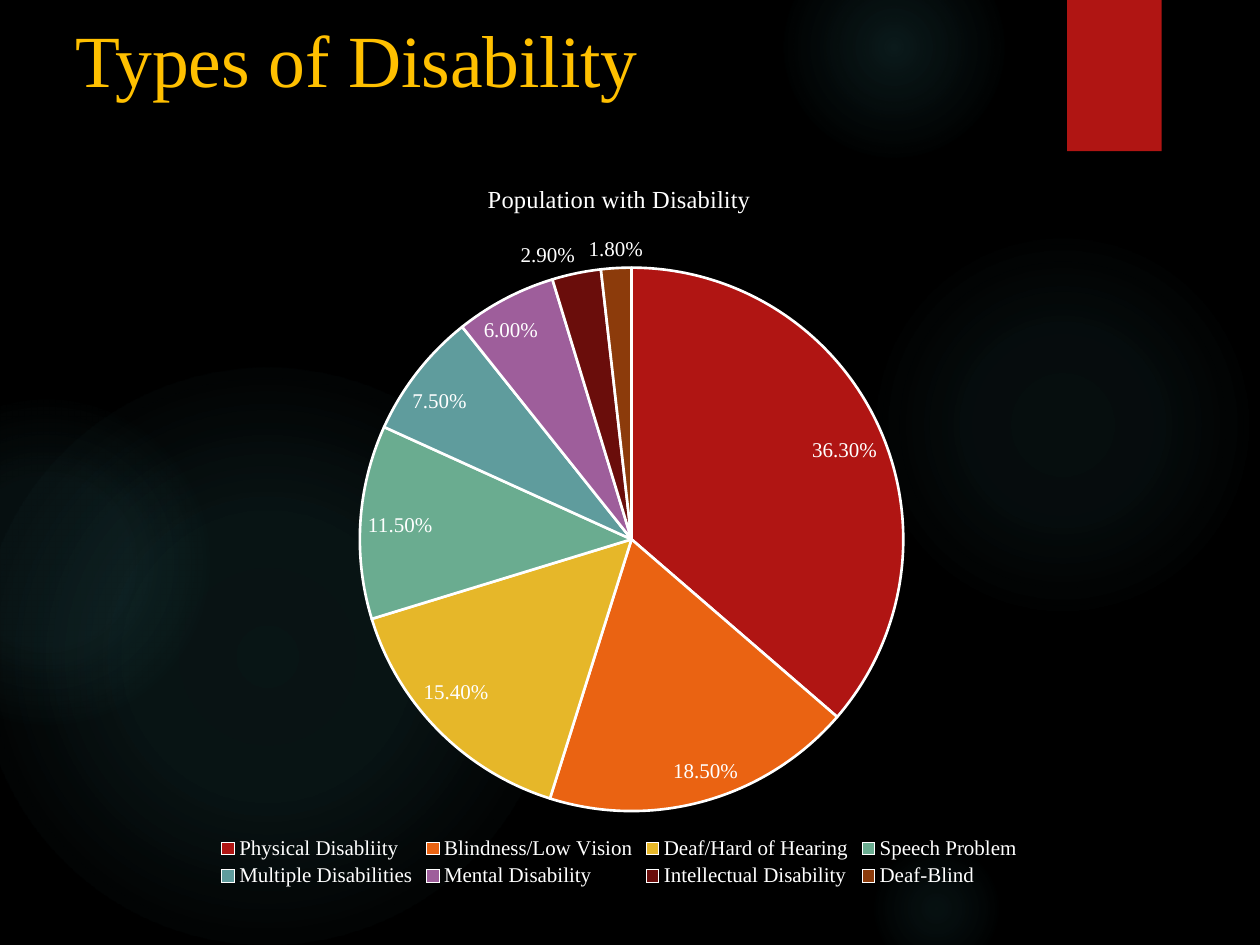
from lxml import etree
from pptx import Presentation
from pptx.chart.data import CategoryChartData
from pptx.dml.color import RGBColor
from pptx.enum.chart import XL_CHART_TYPE, XL_LABEL_POSITION, XL_LEGEND_POSITION
from pptx.enum.shapes import MSO_SHAPE
from pptx.enum.text import MSO_ANCHOR, PP_ALIGN
from pptx.oxml import parse_xml
from pptx.oxml.ns import nsdecls, qn
from pptx.util import Inches, Pt

PIE = XL_CHART_TYPE.PIE
BEST = XL_LABEL_POSITION.BEST_FIT
BOTTOM = XL_LEGEND_POSITION.BOTTOM
OVAL, RECT = MSO_SHAPE.OVAL, MSO_SHAPE.RECTANGLE
TOP, LEFT = MSO_ANCHOR.TOP, PP_ALIGN.LEFT

COLORS = {"back": "000000", "glow": "50B9C1", "tab": "B01513",
          "title": "FFC000", "text": "FFFFFF"}
GLOWS = [
    (6.89, 1.83, 3.08, [(0, 7), (36, 6), (69, 0)]),
    (6.22, -0.5, 1.75, [(0, 14), (36, 7), (73, 0)]),
    (6.89, 6.67, 1.08, [(0, 9), (36, 5), (66, 0)]),
    (-0.17, 2.92, 4.58, [(0, 11), (36, 10), (75, 0)]),
    (-0.92, 3.17, 2.58, [(0, 8), (36, 8), (72, 0)]),
]
SLICES = [
    ("Physical Disabliity", 0.363, "B01513"),
    ("Blindness/Low Vision", 0.185, "EA6312"),
    ("Deaf/Hard of Hearing", 0.154, "E6B729"),
    ("Speech Problem", 0.115, "6AAC90"),
    ("Multiple Disabilities", 0.075, "5F9C9D"),
    ("Mental Disability", 0.06, "9E5E9B"),
    ("Intellectual Disability", 0.029, "6A0D0B"),
    ("Deaf-Blind", 0.018, "8C3B0B"),
]


def rgb(code):
    return RGBColor.from_string(code)


class Deck:
    font = "Times New Roman"

    def __init__(self):
        self.prs = Presentation()
        self.prs.slide_width, self.prs.slide_height = Inches(10), Inches(7.5)
        self.slide = self.prs.slides.add_slide(self.prs.slide_layouts[5])
        self.paint(self.slide.background.fill, COLORS["back"])

    def paint(self, fill, code):
        fill.solid()
        fill.fore_color.rgb = rgb(code)

    def style(self, font, size, code):
        font.name, font.size, font.bold = self.font, Pt(size), False
        font.color.rgb = rgb(code)

    def shape(self, kind, x, y, w, h, code):
        item = self.slide.shapes.add_shape(
            kind, Inches(x), Inches(y), Inches(w), Inches(h))
        item.shadow.inherit = False
        item.line.fill.background()
        self.paint(item.fill, code)
        return item

    def glow(self, x, y, size, stops):
        item = self.shape(OVAL, x, y, size, size, COLORS["glow"])
        marks = "".join(
            f'<a:gs pos="{pos * 1000}"><a:srgbClr val="{COLORS["glow"]}">'
            f'<a:alpha val="{alpha * 1000}"/></a:srgbClr></a:gs>'
            for pos, alpha in stops)
        grad = parse_xml(
            f'<a:gradFill {nsdecls("a")} rotWithShape="1"><a:gsLst>{marks}</a:gsLst>'
            '<a:path path="circle"><a:fillToRect l="50000" t="50000" '
            'r="50000" b="50000"/></a:path></a:gradFill>')
        props = item.element.spPr
        props.replace(props.find(qn("a:solidFill")), grad)

    def title(self, text, x, y, w, h):
        item = self.slide.shapes.title
        item.left, item.top = Inches(x), Inches(y)
        item.width, item.height = Inches(w), Inches(h)
        frame = item.text_frame
        frame.word_wrap = True
        frame.vertical_anchor = TOP
        frame.margin_top = Inches(0.11)
        para = frame.paragraphs[0]
        para.alignment = LEFT
        run = para.add_run()
        run.text = text
        self.style(run.font, 42, COLORS["title"])

    def pie(self, text, slices, x, y, w, h, area):
        data = CategoryChartData(number_format="0.00%")
        data.categories = [name for name, _, _ in slices]
        data.add_series("Series 1", [value for _, value, _ in slices])
        chart = self.slide.shapes.add_chart(
            PIE, Inches(x), Inches(y), Inches(w), Inches(h), data).chart
        self.style(chart.font, 12, COLORS["text"])
        chart.has_title = True
        run = chart.chart_title.text_frame.paragraphs[0].add_run()
        run.text = text
        self.style(run.font, 14, COLORS["text"])
        chart.has_legend = True
        chart.legend.position = BOTTOM
        chart.legend.include_in_layout = False
        self.style(chart.legend.font, 12, COLORS["text"])

        plot = chart.plots[0]
        plot.vary_by_categories = True
        plot.has_data_labels = True
        labels = plot.data_labels
        labels.show_value, labels.show_percentage = True, False
        labels.number_format, labels.number_format_is_linked = "0.00%", False
        labels.position = BEST
        self.style(labels.font, 12, COLORS["text"])
        for index, (_, _, code) in enumerate(slices):
            look = plot.series[0].points[index].format
            self.paint(look.fill, code)
            look.line.color.rgb = rgb(COLORS["text"])
            look.line.width = Pt(1.5)
        self.place(chart, area)

    def place(self, chart, area):
        plot = chart.element.find(".//" + qn("c:plotArea"))
        for old in plot.findall(qn("c:layout")):
            plot.remove(old)
        layout = etree.Element(qn("c:layout"))
        manual = etree.SubElement(layout, qn("c:manualLayout"))
        pairs = [("layoutTarget", "inner"), ("xMode", "edge"), ("yMode", "edge")]
        for tag, value in pairs + list(zip("xywh", area)):
            etree.SubElement(manual, qn("c:" + tag)).set("val", str(value))
        plot.insert(0, layout)


def main():
    deck = Deck()
    for glow in GLOWS:
        deck.glow(*glow)
    deck.shape(RECT, 8.47, 0, 0.75, 1.2, COLORS["tab"])
    deck.title("Types of Disability", 0.5, 0, 9, 1.25)
    tree = deck.slide.shapes.title.element.getparent()
    tree.append(deck.slide.shapes.title.element)
    deck.pie("Population with Disability", SLICES, 0, 1.25, 9.83, 5.83,
             (0.29, 0.15, 0.44, 0.74))
    deck.prs.save("out.pptx")


if __name__ == "__main__":
    main()
